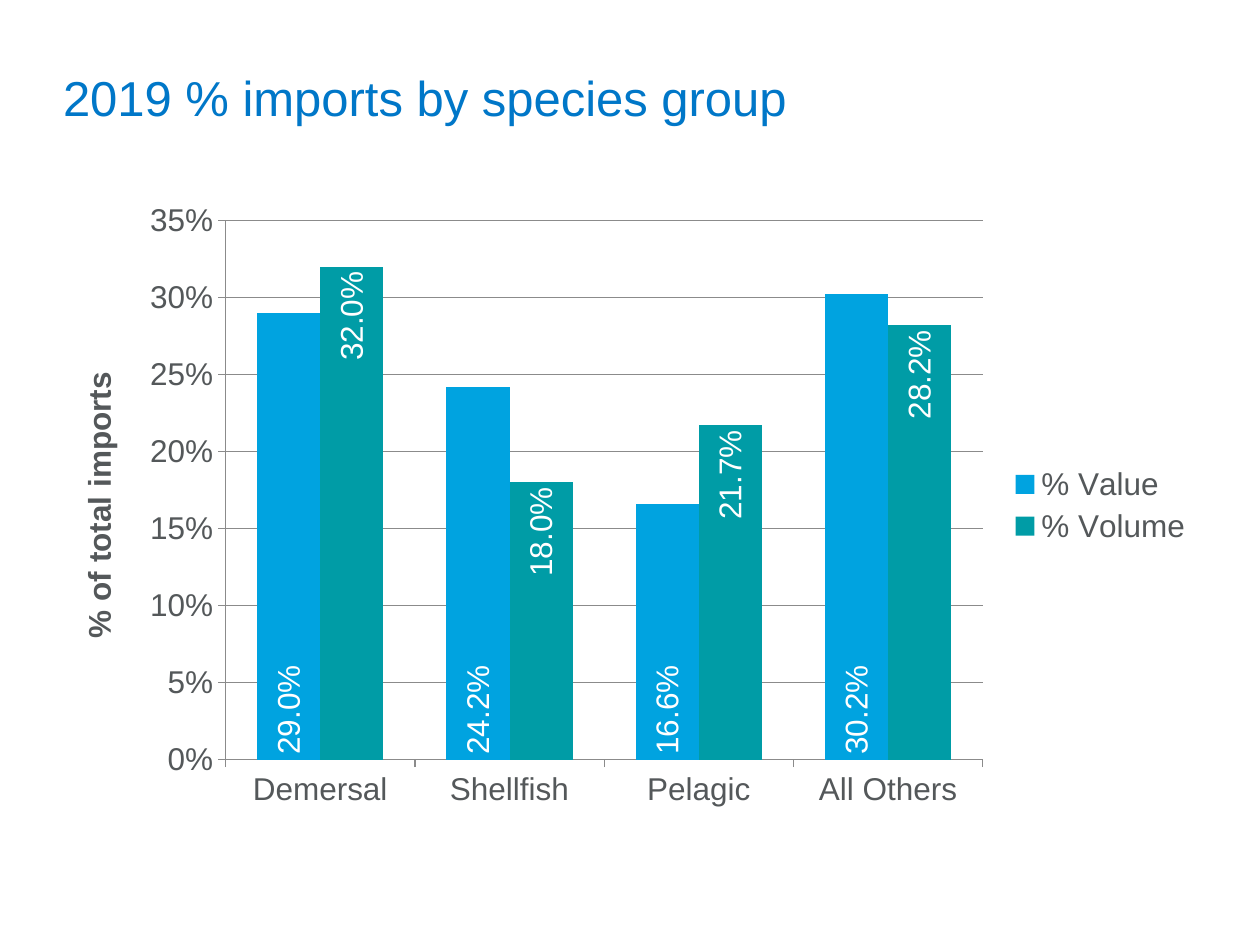
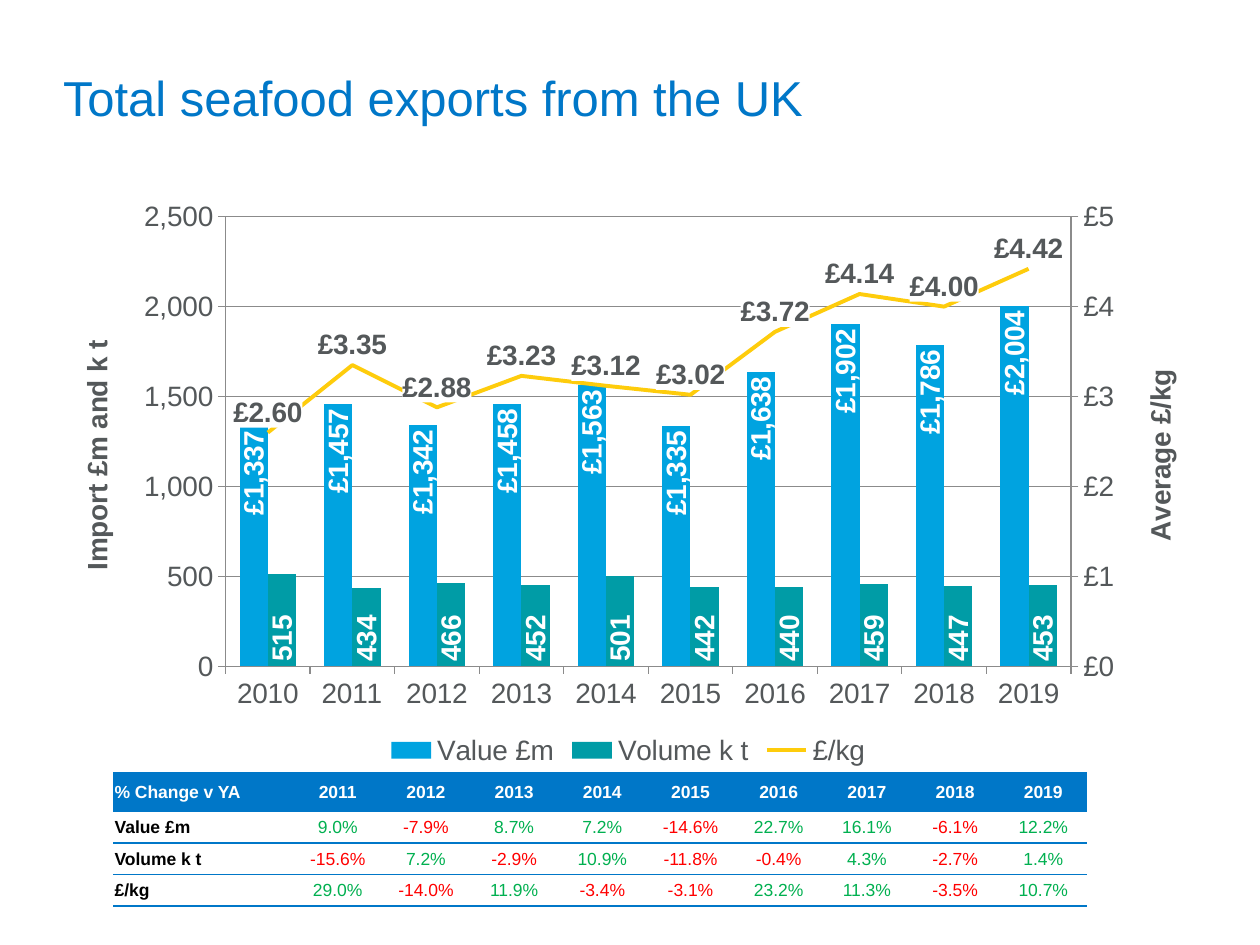
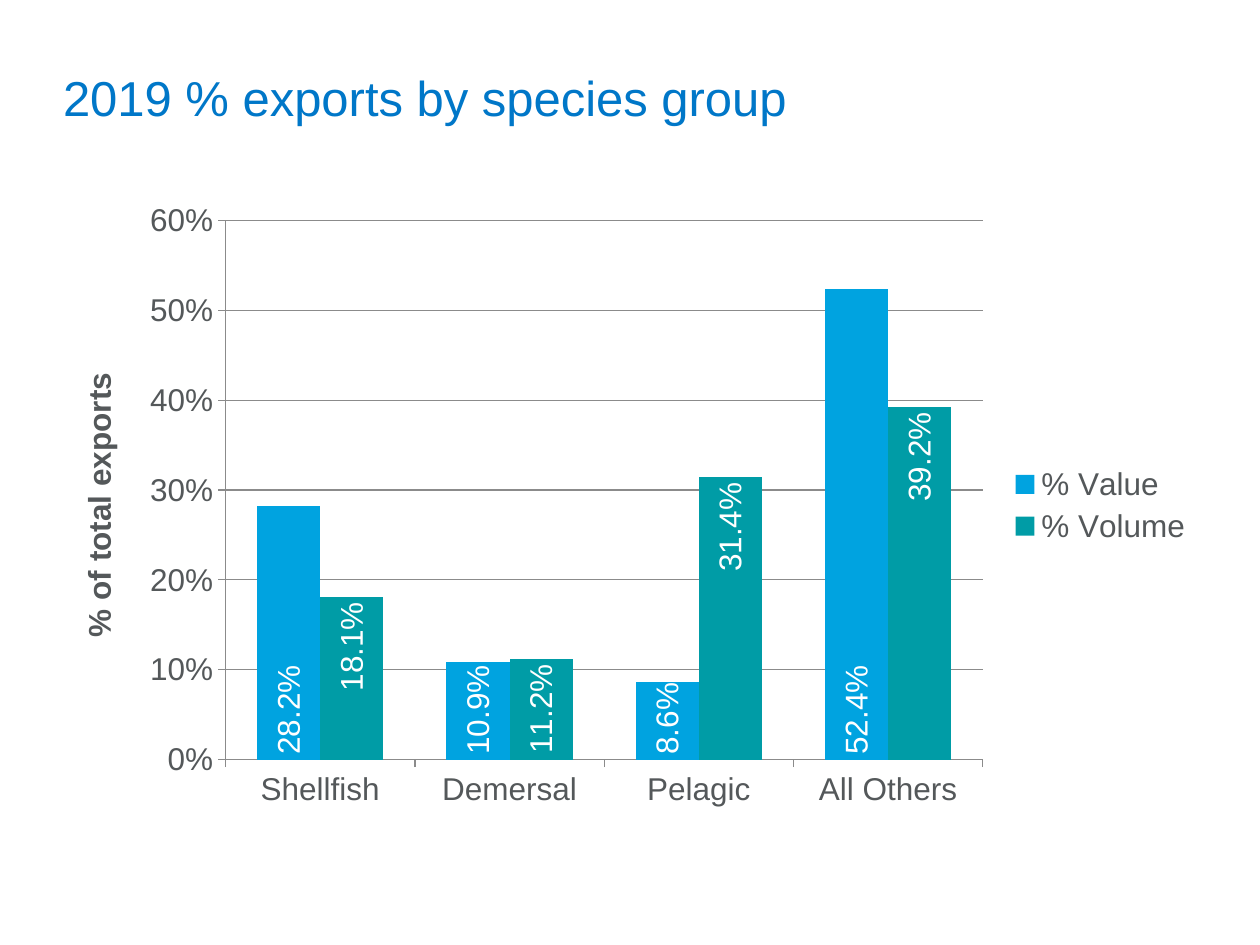
"""Build three slides on seafood trade with charts and a table of yearly change."""
from copy import deepcopy
from typing import NamedTuple

from pptx import Presentation
from pptx.chart.axis import CategoryAxis, ValueAxis
from pptx.chart.data import CategoryChartData
from pptx.dml.color import RGBColor
from pptx.enum.chart import (XL_CHART_TYPE, XL_LABEL_POSITION, XL_LEGEND_POSITION,
                             XL_MARKER_STYLE, XL_TICK_MARK)
from pptx.enum.text import MSO_ANCHOR, MSO_AUTO_SIZE, PP_ALIGN
from pptx.oxml import parse_xml
from pptx.oxml.ns import nsdecls, qn
from pptx.util import Inches, Pt

FONT = "Arial"
BLUE, SKY, TEAL, YELLOW = "0077C8", "00A3E0", "009CA6", "FECC0C"
GREY, RULE, WHITE, BLACK = "54585A", "8B8B8B", "FFFFFF", "000000"
RISE, FALL = "00B050", "FF0000"
LEFT, WIDTH = 0.4, 9.17
CHART_TOP = 1.51
UPWARD = "-5400000"
NO_TABLE_STYLE = "{2D5ABB26-0587-4C30-8999-92F81FD0307C}"
BASE, END, ABOVE = (XL_LABEL_POSITION.INSIDE_BASE, XL_LABEL_POSITION.INSIDE_END,
                    XL_LABEL_POSITION.ABOVE)


class Measure(NamedTuple):
    name: str
    values: list
    colour: str
    position: XL_LABEL_POSITION
    number_format: str


class Scale(NamedTuple):
    title: str
    maximum: float
    step: float
    number_format: str


def colour(value):
    return RGBColor.from_string(value)


class Deck:
    def __init__(self):
        self.deck = Presentation()
        self.deck.slide_width, self.deck.slide_height = Inches(10), Inches(7.5)
        self.page = None

    def style(self, font, size, tint, bold=False):
        font.name, font.size, font.bold = FONT, Pt(size), bold
        font.color.rgb = colour(tint)

    def add_span(self, para, text, size, tint, bold=False):
        span = para.add_run()
        span.text = text
        self.style(span.font, size, tint, bold)

    def add_page(self, title):
        self.page = self.deck.slides.add_slide(self.deck.slide_layouts[5])
        box = self.page.shapes.title
        box.left, box.top, box.width, box.height = map(Inches, (LEFT, 0.3, WIDTH, 0.94))
        frame = box.text_frame
        frame.auto_size, frame.word_wrap = MSO_AUTO_SIZE.NONE, True
        frame.vertical_anchor = MSO_ANCHOR.MIDDLE
        para = frame.paragraphs[0]
        para.alignment = PP_ALIGN.LEFT
        self.add_span(para, title, 28, BLUE)

    def add_columns(self, categories, measures, scale, height, plot_area, size, legend):
        data = CategoryChartData()
        data.categories = categories
        for measure in measures:
            data.add_series(measure.name, measure.values)
        chart = self.page.shapes.add_chart(
            XL_CHART_TYPE.COLUMN_CLUSTERED, Inches(LEFT), Inches(CHART_TOP),
            Inches(WIDTH), Inches(height), data).chart
        self.style(chart.font, size, GREY)
        chart.has_title = False
        chart.has_legend = True
        chart.legend.position = legend
        chart.legend.include_in_layout = False
        plot = chart.plots[0]
        plot.gap_width, plot.overlap, plot.vary_by_categories = 100, 0, False
        self.format_axis(chart.category_axis)
        self.format_scale(chart.value_axis, scale, size)
        self.place_plot(chart, height, plot_area)
        return chart

    def place_plot(self, chart, height, plot_area):
        left, top, wide, high = plot_area
        shares = {"x": (left - LEFT) / WIDTH, "y": (top - CHART_TOP) / height,
                  "w": wide / WIDTH, "h": high / height}
        modes = "".join(f'<c:{side}Mode val="edge"/>' for side in "xy")
        places = "".join(f'<c:{side} val="{share:.4f}"/>' for side, share in shares.items())
        area = chart.plots[0]._element.getparent()
        for layout in area.findall(qn("c:layout")):
            area.remove(layout)
        area.insert(0, parse_xml(
            f'<c:layout {nsdecls("c")}><c:manualLayout><c:layoutTarget val="inner"/>'
            f'{modes}{places}</c:manualLayout></c:layout>'))

    def format_axis(self, axis):
        axis.major_tick_mark, axis.minor_tick_mark = XL_TICK_MARK.OUTSIDE, XL_TICK_MARK.NONE
        self.draw_line(axis.format.line, RULE, 0.75)

    def draw_line(self, line, tint, width):
        line.color.rgb, line.width = colour(tint), Pt(width)

    def format_scale(self, axis, scale, size, gridlines=True):
        self.format_axis(axis)
        axis.minimum_scale, axis.maximum_scale = 0, scale.maximum
        axis.major_unit = scale.step
        axis.tick_labels.number_format = scale.number_format
        axis.tick_labels.number_format_is_linked = False
        axis.has_major_gridlines = gridlines
        if gridlines:
            self.draw_line(axis.major_gridlines.format.line, RULE, 0.75)
        axis.has_title = False
        axis.has_title = True
        frame = axis.axis_title.text_frame
        self.add_span(frame.paragraphs[0], scale.title, size, GREY, True)
        frame._txBody.bodyPr.set("rot", UPWARD)
        frame._txBody.bodyPr.set("vert", "horz")

    def label_series(self, series, measure, size, tint, bold):
        labels = series.data_labels
        labels.show_value = True
        labels.number_format, labels.number_format_is_linked = measure.number_format, False
        labels.position = measure.position
        self.style(labels.font, size, tint, bold)
        return labels._element.find(qn("c:txPr"))

    def format_columns(self, chart, measures, size, bold=False):
        for series, measure in zip(chart.plots[0].series, measures):
            series.format.fill.solid()
            series.format.fill.fore_color.rgb = colour(measure.colour)
            text = self.label_series(series, measure, size, WHITE, bold)
            text.find(qn("a:bodyPr")).set("rot", UPWARD)
            text.find(qn("a:bodyPr")).set("vert", "horz")

    def move_last_to_line(self, chart, measure, scale, size):
        columns = chart.plots[0]._element
        item = columns.findall(qn("c:ser"))[-1]
        for flag in item.findall(qn("c:invertIfNegative")):
            item.remove(flag)
        line = parse_xml(
            f'<c:lineChart {nsdecls("c")}><c:grouping val="standard"/><c:varyColors val="0"/>'
            '<c:marker val="1"/><c:axId val="5001"/><c:axId val="5002"/></c:lineChart>')
        line.insert(2, item)
        columns.addnext(line)
        self.add_right_axis(chart, scale, size)
        series = chart.plots[1].series[0]
        series.smooth = False
        series.marker.style = XL_MARKER_STYLE.NONE
        self.draw_line(series.format.line, measure.colour, 2.25)
        text = self.label_series(series, measure, size, GREY, True)
        text.addprevious(parse_xml(
            f'<c:spPr {nsdecls("c", "a")}><a:solidFill><a:srgbClr val="{WHITE}"/>'
            '</a:solidFill></c:spPr>'))

    def add_right_axis(self, chart, scale, size):
        years, amounts = chart.category_axis._element, chart.value_axis._element
        hidden, right = deepcopy(years), deepcopy(amounts)
        amounts.addnext(right)
        right.addnext(hidden)
        for axis, own, other in ((hidden, "5001", "5002"), (right, "5002", "5001")):
            axis.find(qn("c:axId")).set("val", own)
            axis.find(qn("c:crossAx")).set("val", other)
        right.find(qn("c:axPos")).set("val", "r")
        right.find(qn("c:crosses")).set("val", "max")
        CategoryAxis(hidden).visible = False
        self.format_scale(ValueAxis(right), scale, size, gridlines=False)

    def add_change_table(self, header, rows):
        widths = [1.43] + [0.7] * (len(header) - 1)
        heights = [0.31] + [0.25] * len(rows)
        table = self.page.shapes.add_table(
            len(heights), len(widths), Inches(0.9), Inches(6.13),
            Inches(sum(widths)), Inches(sum(heights))).table
        table.horz_banding = False
        table._tbl.tblPr.find(qn("a:tableStyleId")).text = NO_TABLE_STYLE
        for column, width in zip(table.columns, widths):
            column.width = Inches(width)
        for index, (row, height, texts) in enumerate(zip(table.rows, heights, [header] + rows)):
            row.height = Inches(height)
            for place, (cell, text) in enumerate(zip(row.cells, texts)):
                self.fill_cell(cell, text, index == 0, place == 0)

    def fill_cell(self, cell, text, is_header, is_first):
        cell.margin_left = cell.margin_right = cell.margin_top = Inches(0.01)
        cell.margin_bottom = 0
        cell.vertical_anchor = MSO_ANCHOR.MIDDLE
        if is_header:
            cell.fill.solid()
            cell.fill.fore_color.rgb = colour(BLUE)
            tint = WHITE
        else:
            cell.fill.background()
            tint = BLACK if is_first else FALL if text.startswith("-") else RISE
        para = cell.text_frame.paragraphs[0]
        para.alignment = PP_ALIGN.LEFT if is_first else PP_ALIGN.CENTER
        self.add_span(para, text, 10, tint, is_header or is_first)
        cell._tc.get_or_add_tcPr().insert(0, parse_xml(
            f'<a:lnB {nsdecls("a")} w="{Pt(1)}"><a:solidFill><a:srgbClr val="{BLUE}"/>'
            '</a:solidFill></a:lnB>'))

    def add_species_page(self, flow, groups, values, volumes, maximum, step):
        self.add_page(f"2019 % {flow} by species group")
        measures = [Measure("% Value", values, SKY, BASE, "0.0%"),
                    Measure("% Volume", volumes, TEAL, END, "0.0%")]
        chart = self.add_columns(
            groups, measures, Scale(f"% of total {flow}", maximum, step, "0%"),
            5, (1.79, 1.75, 6.01, 4.28), 18, XL_LEGEND_POSITION.RIGHT)
        self.format_columns(chart, measures, 18)

    def add_exports_page(self):
        self.add_page("Total seafood exports from the UK")
        years = [str(year) for year in range(2010, 2020)]
        measures = [
            Measure("Value £m", [1337, 1457, 1342, 1458, 1563, 1335, 1638, 1902, 1786, 2004],
                    SKY, END, '"£"#,##0'),
            Measure("Volume k t", [515, 434, 466, 452, 501, 442, 440, 459, 447, 453],
                    TEAL, BASE, "#,##0"),
            Measure("£/kg", [2.6, 3.35, 2.88, 3.23, 3.12, 3.02, 3.72, 4.14, 4, 4.42],
                    YELLOW, ABOVE, '"£"#,##0.00')]
        chart = self.add_columns(
            years, measures, Scale("Import £m and k t", 2500, 500, "#,##0"),
            4.61, (1.79, 1.72, 6.71, 3.57), 16, XL_LEGEND_POSITION.BOTTOM)
        self.move_last_to_line(chart, measures[-1], Scale("Average £/kg", 5, 1, '"£"#,##0'), 16)
        self.format_columns(chart, measures[:-1], 16, True)
        changes = ["9.0% -7.9% 8.7% 7.2% -14.6% 22.7% 16.1% -6.1% 12.2%",
                   "-15.6% 7.2% -2.9% 10.9% -11.8% -0.4% 4.3% -2.7% 1.4%",
                   "29.0% -14.0% 11.9% -3.4% -3.1% 23.2% 11.3% -3.5% 10.7%"]
        self.add_change_table(
            ["% Change v YA"] + years[1:],
            [[measure.name] + change.split() for measure, change in zip(measures, changes)])


def main():
    trade = Deck()
    trade.add_species_page("imports", ["Demersal", "Shellfish", "Pelagic", "All Others"],
                           [0.29, 0.242, 0.166, 0.302], [0.32, 0.18, 0.217, 0.282], 0.35, 0.05)
    trade.add_exports_page()
    trade.add_species_page("exports", ["Shellfish", "Demersal", "Pelagic", "All Others"],
                           [0.282, 0.109, 0.086, 0.524], [0.181, 0.112, 0.314, 0.392], 0.6, 0.1)
    trade.deck.save("out.pptx")


if __name__ == "__main__":
    main()
